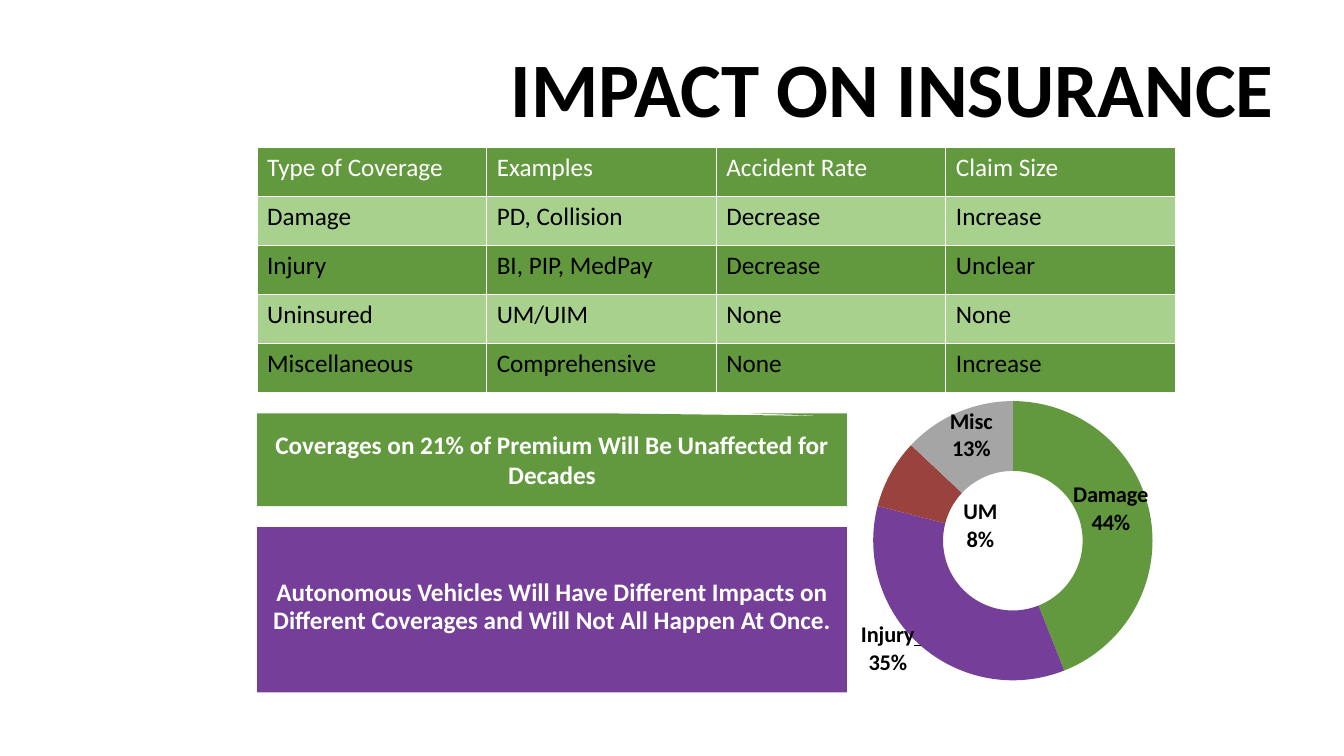
"""Build the slide on how autonomous vehicles affect insurance coverages."""
from lxml import etree
from pptx import Presentation, util as u
from pptx.chart.data import CategoryChartData
from pptx.dml.color import RGBColor
from pptx.enum import chart as charts, shapes, text
from pptx.oxml import parse_xml
from pptx.oxml.ns import nsdecls, qn

COLORS = {"green": "62993E", "light": "A9D18E", "purple": "753E99", "red": "99423E",
          "gray": "A5A5A5", "white": "FFFFFF", "black": "000000"}
FONT = "Calibri"


def color(name):
    return RGBColor.from_string(COLORS[name])


def write(frame, words, size, ink, bold, align, spacing=None):
    frame.word_wrap = True
    para = frame.paragraphs[0]
    para.alignment = align
    if spacing:
        para.line_spacing = spacing
    span = para.add_run()
    span.text = words
    span.font.name = FONT
    span.font.size = u.Pt(size)
    span.font.bold = bold
    span.font.color.rgb = color(ink)


deck = Presentation()
deck.slide_width = u.Inches(13.33)
deck.slide_height = u.Inches(7.5)
page = deck.slides.add_slide(deck.slide_layouts[6])

title = page.shapes.add_textbox(u.Inches(0.79), u.Inches(0.46), u.Inches(11.94), u.Inches(1))
write(title.text_frame, "IMPACT ON INSURANCE", 55, "black", True, text.PP_ALIGN.RIGHT, 0.9)

slices = [("Damage", 44, "green", -0.015, -0.04), ("Injury", 35, "purple", -0.17, 0.1),
          ("UM", 8, "red", 0.18, 0.12), ("Misc", 13, "gray", 0, -0.03)]
data = CategoryChartData()
data.categories = [name for name, *_ in slices]
data.add_series("Series 1", [share for _, share, *_ in slices])
chart = page.shapes.add_chart(charts.XL_CHART_TYPE.DOUGHNUT, u.Inches(8.4), u.Inches(3.9),
                              u.Inches(3.26), u.Inches(2.96), data).chart
chart.has_legend = False
chart.has_title = False
chart.font.name = FONT
chart.font.size = u.Pt(16)
chart.font.bold = True
chart.font.color.rgb = color("black")
chart.plots[0].vary_by_categories = False
chart._chartSpace.find(".//" + qn("c:holeSize")).set("val", "50")

plot_area = chart._chartSpace.chart.plotArea
for old in plot_area.findall(qn("c:layout")):
    plot_area.remove(old)
plot_area.insert(0, parse_xml(
    f'<c:layout {nsdecls("c")}><c:manualLayout><c:layoutTarget val="inner"/>'
    '<c:xMode val="edge"/><c:yMode val="edge"/><c:x val="0.08"/><c:y val="0"/>'
    '<c:w val="0.85"/><c:h val="0.99"/></c:manualLayout></c:layout>'))

ring = chart.plots[0].series[0]
labels = ring.data_labels
labels.show_value = False
labels.show_category_name = True
labels.show_percentage = True
labels.font.name = FONT
labels.font.size = u.Pt(16)
labels.font.bold = True
labels.font.color.rgb = color("black")
text_style = etree.tostring(labels._element.find(qn("c:txPr")), encoding="unicode")
for index, (name, share, fill, shift_x, shift_y) in enumerate(slices):
    point = ring.points[index].format
    point.fill.solid()
    point.fill.fore_color.rgb = color(fill)
    point.line.fill.background()
    labels._element.insert(index, parse_xml(
        f'<c:dLbl {nsdecls("c", "a")}><c:idx val="{index}"/><c:layout><c:manualLayout>'
        f'<c:x val="{shift_x}"/><c:y val="{shift_y}"/></c:manualLayout></c:layout>'
        f'<c:numFmt formatCode="0%" sourceLinked="0"/>{text_style}'
        '<c:showLegendKey val="0"/><c:showVal val="0"/><c:showCatName val="1"/>'
        '<c:showSerName val="0"/><c:showPercent val="1"/><c:showBubbleSize val="0"/>'
        '<c:separator>\n</c:separator></c:dLbl>'))

boxes = [
    (shapes.MSO_SHAPE.RECTANGLE, 5.23, 1.64, "purple", 0.1, 0.9,
     "Autonomous Vehicles Will Have Different Impacts on Different Coverages "
     "and Will Not All Happen At Once."),
    (shapes.MSO_SHAPE.RECTANGULAR_CALLOUT, 4.1, 0.92, "green", 0.05, None,
     "Coverages on 21% of Premium Will Be Unaffected for Decades"),
]
for kind, top, height, fill, bottom_inset, spacing, words in boxes:
    box = page.shapes.add_shape(kind, u.Inches(2.55), u.Inches(top),
                                u.Inches(5.85), u.Inches(height))
    box.shadow.inherit = False
    box.fill.solid()
    box.fill.fore_color.rgb = color(fill)
    box.line.fill.background()
    box.text_frame.margin_bottom = u.Inches(bottom_inset)
    box.text_frame.vertical_anchor = text.MSO_ANCHOR.MIDDLE
    write(box.text_frame, words, 18, "white", True, text.PP_ALIGN.CENTER, spacing)
    if kind == shapes.MSO_SHAPE.RECTANGULAR_CALLOUT:
        box.adjustments[0] = 0.47
        box.adjustments[1] = -0.47

coverages = [
    ("Type of Coverage", "Examples", "Accident Rate", "Claim Size"),
    ("Damage", "PD, Collision", "Decrease", "Increase"),
    ("Injury", "BI, PIP, MedPay", "Decrease", "Unclear"),
    ("Uninsured", "UM/UIM", "None", "None"),
    ("Miscellaneous", "Comprehensive", "None", "Increase"),
]
table = page.shapes.add_table(5, 4, u.Inches(2.55), u.Inches(1.46),
                              u.Inches(9.11), u.Inches(2.44)).table
for row, values in enumerate(coverages):
    for column, words in enumerate(values):
        cell = table.cell(row, column)
        write(cell.text_frame, words, 18, "black" if row else "white", False,
              text.PP_ALIGN.LEFT)
        cell.fill.solid()
        cell.fill.fore_color.rgb = color("light" if row % 2 else "green")
        properties = cell._tc.get_or_add_tcPr()
        for place, side in enumerate(("lnL", "lnR", "lnT", "lnB")):
            properties.insert(place, parse_xml(
                f'<a:{side} {nsdecls("a")} w="12700"><a:solidFill>'
                f'<a:srgbClr val="{COLORS["white"]}"/></a:solidFill></a:{side}>'))

deck.save("out.pptx")
